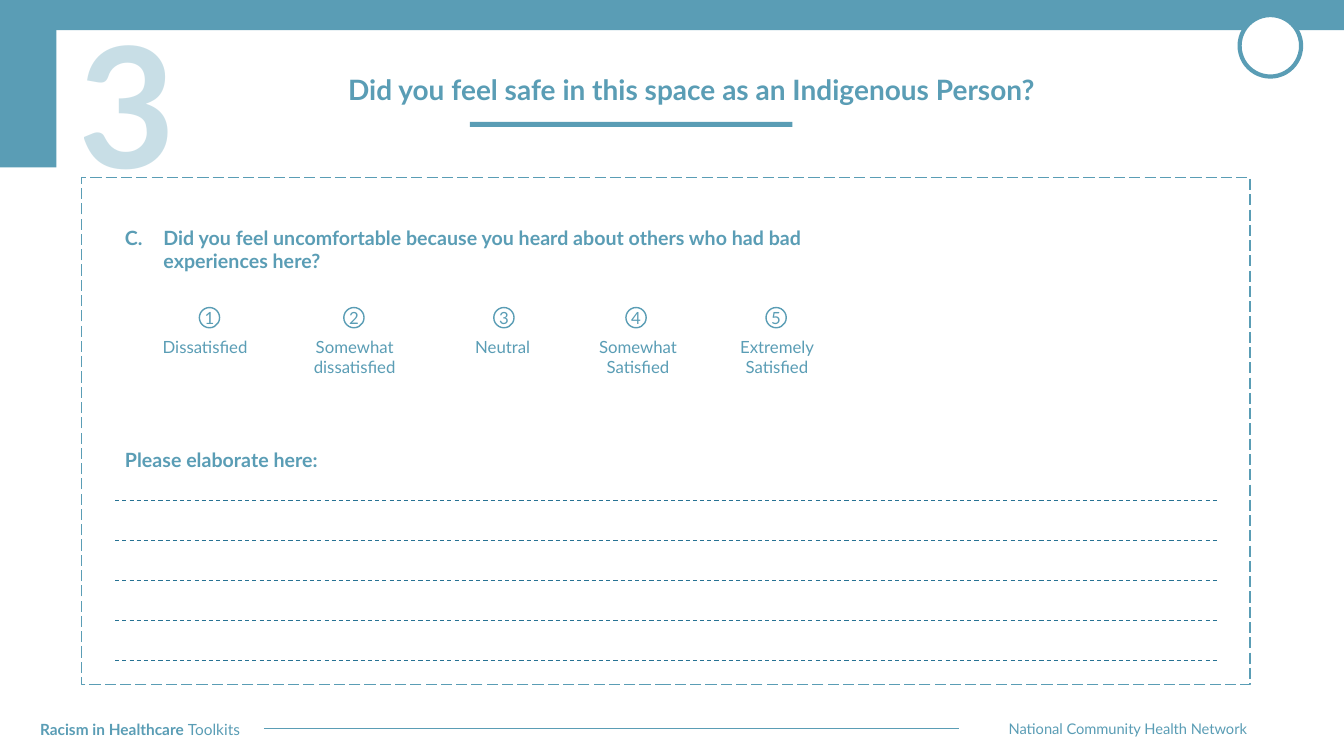
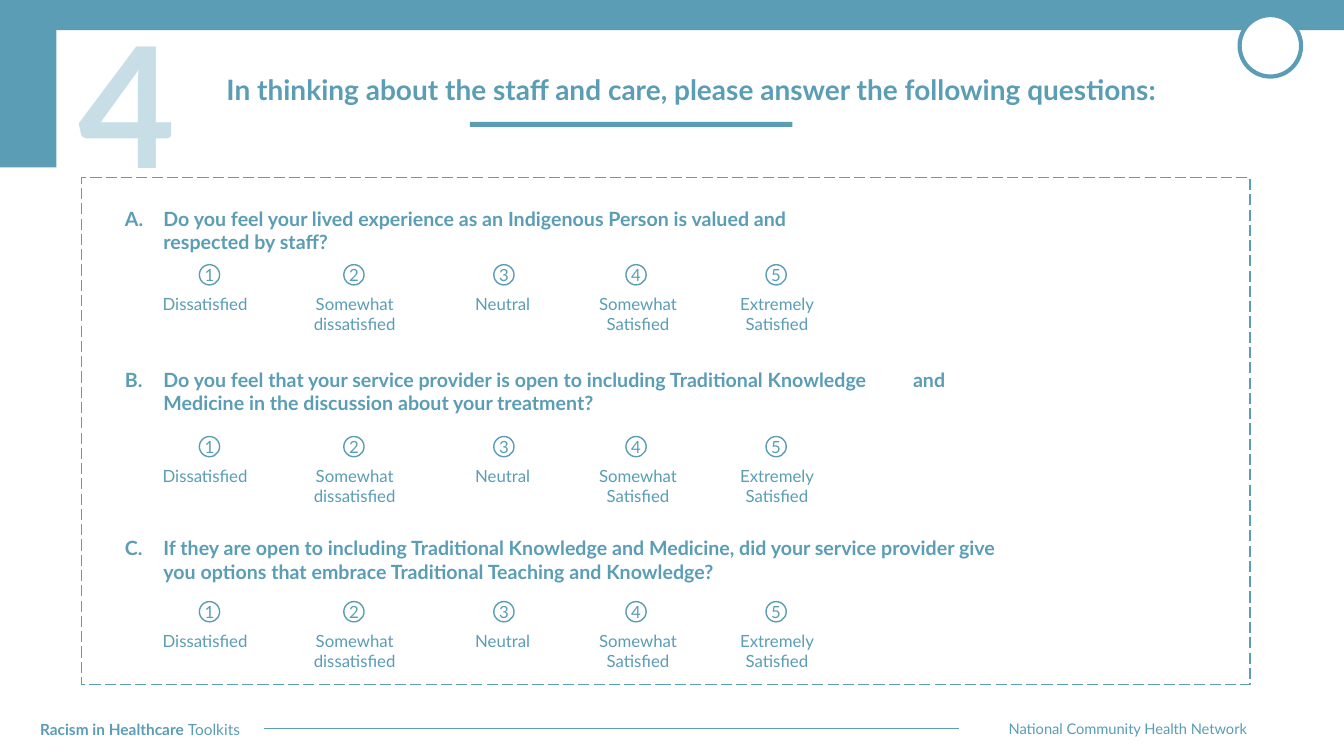
import pptx
import pptx.dml.color
import pptx.enum.shapes
import pptx.enum.text
import pptx.oxml.ns
import pptx.util
from lxml import etree

Cm = pptx.util.Cm
Pt = pptx.util.Pt
MSO_SHAPE = pptx.enum.shapes.MSO_SHAPE
ALIGN = pptx.enum.text.PP_ALIGN
ANCHOR = pptx.enum.text.MSO_ANCHOR
DASH = pptx.enum.dml.MSO_LINE
qn = pptx.oxml.ns.qn

COLORS = {"teal": "5A9DB5", "deep": "277293", "white": "FFFFFF"}
FONT = "Lato"
WIDTH, HEIGHT = 33.87, 19.05
FRAME = (2.06, 4.47, 29.44, 12.78)
INDENT = 0.97
CIRCLE = 0.51
LABEL_WIDTH = 3.05
SCALE = [
    ("Dissatisfied", 2.38, 2.27),
    ("Somewhat dissatisfied", 6.02, 6.04),
    ("Neutral", 9.8, 9.77),
    ("Somewhat Satisfied", 13.13, 13.18),
    ("Extremely Satisfied", 16.66, 16.68),
]


def rgb(name):
    """Return the named palette colour."""
    return pptx.dml.color.RGBColor.from_string(COLORS[name])


def add_run(p, text, size, bold=False):
    """Add one formatted run to a paragraph."""
    r = p.add_run()
    r.text = text
    r.font.name = FONT
    r.font.size = Pt(size)
    r.font.bold = bold
    r.font.color.rgb = rgb("teal")
    return r


def add_text(s, box, runs, align=ALIGN.LEFT):
    """Add a wrapping text box from (text, size, bold) runs and return its frame."""
    tf = s.shapes.add_textbox(*map(Cm, box)).text_frame
    tf.word_wrap = True
    p = tf.paragraphs[0]
    p.alignment = align
    for run in runs:
        add_run(p, *run)
    return tf


def add_shape(s, kind, box, fill=None, line=None, width=1):
    """Add a flat preset shape with an optional fill and outline."""
    sp = s.shapes.add_shape(kind, *map(Cm, box))
    sp.shadow.inherit = False
    if fill:
        sp.fill.solid()
        sp.fill.fore_color.rgb = rgb(fill)
    else:
        sp.fill.background()
    if line:
        sp.line.color.rgb = rgb(line)
        sp.line.width = Pt(width)
    else:
        sp.line.fill.background()
    return sp


def add_rule(s, left, right, y, color, width, dash=None):
    """Add a horizontal line."""
    line = s.shapes.add_connector(
        pptx.enum.shapes.MSO_CONNECTOR.STRAIGHT, Cm(left), Cm(y), Cm(right), Cm(y))
    line.line.color.rgb = rgb(color)
    line.line.width = Pt(width)
    if dash:
        line.line.dash_style = dash
    etree.SubElement(line._element.spPr, qn("a:effectLst"))


def format_heading(tf):
    """Centre a heading in its box with tight lines."""
    tf.vertical_anchor = ANCHOR.MIDDLE
    p = tf.paragraphs[0]
    p.alignment = ALIGN.CENTER
    p.line_spacing = 0.9
    p.space_before = Pt(0)
    p.space_after = Pt(6)
    return p


def add_header(s, number, title):
    """Draw the bands, section number and title."""
    add_shape(s, MSO_SHAPE.RECTANGLE, (0, 0, WIDTH, 0.76), "teal")
    add_shape(s, MSO_SHAPE.RECTANGLE, (0, 0, 1.42, 4.22), "teal")
    add_shape(s, MSO_SHAPE.OVAL, (31.24, 0.38, 1.55, 1.55), "white", "teal", 3)
    add_shape(s, MSO_SHAPE.RECTANGLE, (11.84, 3.07, 8.13, 0.13), "teal")

    sp = s.shapes.title
    sp.left, sp.top, sp.width, sp.height = map(Cm, (4.19, 1.57, 26.47, 1.45))
    sp.text_frame.auto_size = pptx.enum.text.MSO_AUTO_SIZE.NONE
    add_run(format_heading(sp.text_frame), title, 20, True)

    tf = add_text(s, (1.73, 1.73, 2.9, 2.29), [(number, 120, True)])
    r = format_heading(tf).runs[0]
    color = r._r.find(".//" + qn("a:srgbClr"))
    etree.SubElement(color, qn("a:alpha"), val="32000")


def add_footer(s):
    """Draw the footer texts and the line between them."""
    top = HEIGHT - 1.04
    add_text(s, (0.76, top, 6, 0.74),
             [("Racism in Healthcare ", 11, True), ("Toolkits", 11)])
    add_rule(s, 6.65, 24.16, top + 0.35, "teal", 0.5)
    add_text(s, (25.17, top, 7.6, 0.74),
             [("National Community Health Network", 10.5)])


def add_scale(s, left, top):
    """Draw the five numbered circles with their labels below."""
    for number, (label, circle_x, label_x) in enumerate(SCALE, 1):
        sp = add_shape(s, MSO_SHAPE.OVAL,
                       (left + circle_x - CIRCLE / 2, top, CIRCLE, CIRCLE), line="teal")
        tf = sp.text_frame
        tf.word_wrap = False
        tf.margin_left = tf.margin_right = tf.margin_top = tf.margin_bottom = 0
        tf.vertical_anchor = ANCHOR.MIDDLE
        tf.paragraphs[0].alignment = ALIGN.CENTER
        add_run(tf.paragraphs[0], str(number), 12)
        add_text(s, (left + label_x - LABEL_WIDTH / 2, top + 0.61, LABEL_WIDTH, 1.27),
                 [(label, 12)], ALIGN.CENTER)


def add_question(s, box, letter, text, scale_gap, tab=None):
    """Draw a lettered question with its rating scale below."""
    left, top, width = box
    p = add_text(s, (left, top, width, 1.45), [(text, 14, True)]).paragraphs[0]
    pPr = p._p.get_or_add_pPr()
    pPr.set("marL", str(Cm(INDENT)))
    pPr.set("indent", str(-Cm(INDENT)))
    etree.SubElement(pPr, qn("a:buFont"), typeface=FONT)
    etree.SubElement(pPr, qn("a:buAutoNum"), type="alphaUcPeriod",
                     startAt=str("ABC".index(letter) + 1))
    if tab:
        tabs = etree.SubElement(pPr, qn("a:tabLst"))
        etree.SubElement(tabs, qn("a:tab"), pos=str(Cm(tab)), algn="l")
    add_scale(s, left, top + scale_gap)


def add_answer_lines(s, left, top, width):
    """Draw the prompt and five evenly spaced writing lines."""
    add_text(s, (left, top, width, 0.86), [("Please elaborate here:", 14, True)])
    for i in range(5):
        add_rule(s, left, left + width, top + 1.45 + i * 1.01, "deep", 0.75, DASH.DASH)


def add_survey_slide(prs, number, title):
    """Add a slide with the shared header, dashed frame and footer."""
    s = prs.slides.add_slide(prs.slide_layouts[5])
    add_header(s, number, title)
    frame = add_shape(s, MSO_SHAPE.RECTANGLE, FRAME, line="teal")
    frame.line.dash_style = DASH.LONG_DASH
    add_footer(s)
    return s


def main():
    """Build and save the two survey slides."""
    prs = pptx.Presentation()
    prs.slide_width, prs.slide_height = Cm(WIDTH), Cm(HEIGHT)
    left = FRAME[0] + 0.84

    s = add_survey_slide(prs, "3", "Did you feel safe in this space as an Indigenous Person?")
    add_question(s, (left, 5.56, 19.38), "C",
                 "Did you feel uncomfortable because you heard about others "
                 "who had bad experiences here?", 2.19)
    add_answer_lines(s, left, 11.15, 27.76)

    s = add_survey_slide(prs, "4", "In thinking about the staff and care, "
                                   "please answer the following questions:")
    add_question(s, (left, 5.08, 19.38), "A",
                 "Do you feel your lived experience as an Indigenous Person "
                 "is valued and respected by staff?", 1.59)
    add_question(s, (left, 9.14, 22.45), "B",
                 "Do you feel that your service provider is open to including "
                 "Traditional Knowledge\tand Medicine in the discussion about "
                 "your treatment?", 1.86, tab=19.86)
    add_question(s, (left, 13.39, 22.45), "C",
                 "If they are open to including Traditional Knowledge and Medicine, "
                 "did your service provider give you options that embrace "
                 "Traditional Teaching and Knowledge?", 1.77)

    prs.save("out.pptx")


if __name__ == "__main__":
    main()
